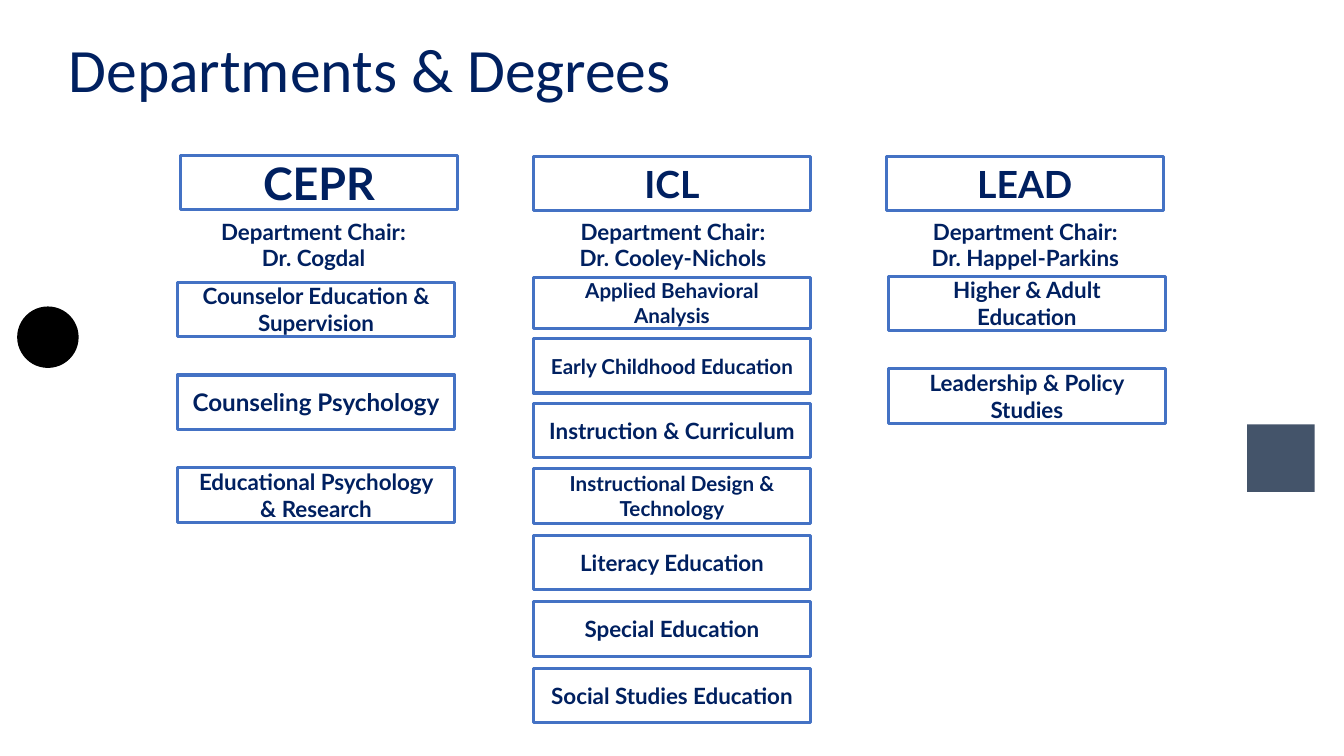
from dataclasses import dataclass

from pptx import Presentation
from pptx import util as u
from pptx.dml import color
from pptx.enum import shapes, text

COLORS = {"navy": "002060", "border": "4472C4", "slate": "44546A", "black": "000000"}
BOX_WIDTH, BOX_HEIGHT = 2.75, 0.54
INSET = 0.13


@dataclass
class Box:
    label: str
    top: float
    size: float = 16
    height: float = BOX_HEIGHT


@dataclass
class Department:
    heading: Box
    heading_left: float
    chair: str
    chair_left: float
    chair_width: float
    degrees_left: float
    degrees: list[Box]


@dataclass
class Ornament:
    kind: shapes.MSO_SHAPE
    left: float
    top: float
    side: float
    fill: str


ORNAMENTS = [
    Ornament(shapes.MSO_SHAPE.RECTANGLE, 12.37, 4.21, 0.67, "slate"),
    Ornament(shapes.MSO_SHAPE.OVAL, 0.17, 3.04, 0.61, "black"),
]

DEPARTMENTS = [
    Department(Box("CEPR", 1.54, 32), 1.79, "Dr. Cogdal", 1.74, 2.74, 1.76, [
        Box("Counselor Education & Supervision", 2.8),
        Box("Counseling Psychology", 3.72, 17.3),
        Box("Educational Psychology & Research", 4.64),
    ]),
    Department(Box("ICL", 1.55, 26.7), 5.29, "Dr. Cooley-Nichols", 5.25, 2.85, 5.29, [
        Box("Applied Behavioral Analysis", 2.75, 14.7, 0.51),
        Box("Early Childhood Education", 3.36, 14.7),
        Box("Instruction & Curriculum", 4),
        Box("Instructional Design & Technology", 4.65, 14.7),
        Box("Literacy Education", 5.31),
        Box("Special Education", 5.97),
        Box("Social Studies Education", 6.63),
    ]),
    Department(Box("LEAD", 1.55, 26.7), 8.79, "Dr. Happel-Parkins", 8.8, 2.74, 8.81, [
        Box("Higher & Adult Education", 2.74),
        Box("Leadership & Policy Studies", 3.66),
    ]),
]


def rgb(name: str) -> color.RGBColor:
    return color.RGBColor.from_string(COLORS[name])


def write(shape, content: str, size: float, font: str = "Lato", bold: bool = True,
          align=text.PP_ALIGN.CENTER, anchor=text.MSO_ANCHOR.TOP,
          vertical_inset: float = INSET) -> None:
    frame = shape.text_frame
    frame.word_wrap = True
    frame.vertical_anchor = anchor
    frame.margin_left = frame.margin_right = u.Inches(INSET)
    frame.margin_top = frame.margin_bottom = u.Inches(vertical_inset)
    frame.text = content
    for paragraph in frame.paragraphs:
        paragraph.alignment = align
        for run in paragraph.runs:
            run.font.name = font
            run.font.size = u.Pt(size)
            run.font.bold = bold
            run.font.color.rgb = rgb("navy")


def add_text(slide, left: float, top: float, width: float, height: float):
    return slide.shapes.add_textbox(
        u.Inches(left), u.Inches(top), u.Inches(width), u.Inches(height))


def add_ornament(slide, ornament: Ornament) -> None:
    side = u.Inches(ornament.side)
    shape = slide.shapes.add_shape(
        ornament.kind, u.Inches(ornament.left), u.Inches(ornament.top), side, side)
    shape.shadow.inherit = False
    shape.fill.solid()
    shape.fill.fore_color.rgb = rgb(ornament.fill)
    shape.line.fill.background()


def add_box(slide, box: Box, left: float) -> None:
    shape = slide.shapes.add_shape(
        shapes.MSO_SHAPE.RECTANGLE, u.Inches(left), u.Inches(box.top),
        u.Inches(BOX_WIDTH), u.Inches(box.height))
    shape.shadow.inherit = False
    shape.fill.background()
    shape.line.color.rgb = rgb("border")
    shape.line.width = u.Pt(2.25)
    write(shape, box.label, box.size, anchor=text.MSO_ANCHOR.MIDDLE)


def add_department(slide, department: Department) -> None:
    add_box(slide, department.heading, department.heading_left)
    chair = add_text(slide, department.chair_left, 2.09, department.chair_width, 0.67)
    write(chair, f"Department Chair:\n{department.chair}", 16, vertical_inset=0.07)
    for degree in department.degrees:
        add_box(slide, degree, department.degrees_left)


def main() -> None:
    presentation = Presentation()
    presentation.slide_width = u.Inches(13.33)
    presentation.slide_height = u.Inches(7.5)
    slide = presentation.slides.add_slide(presentation.slide_layouts[6])
    for ornament in ORNAMENTS:
        add_ornament(slide, ornament)
    title = add_text(slide, 0.55, 0.26, 11.25, 0.84)
    write(title, "Departments & Degrees", 44, "Calibri", False, text.PP_ALIGN.LEFT)
    title.text_frame.paragraphs[0].line_spacing = 0.9
    for department in DEPARTMENTS:
        add_department(slide, department)
    presentation.save("out.pptx")


if __name__ == "__main__":
    main()
